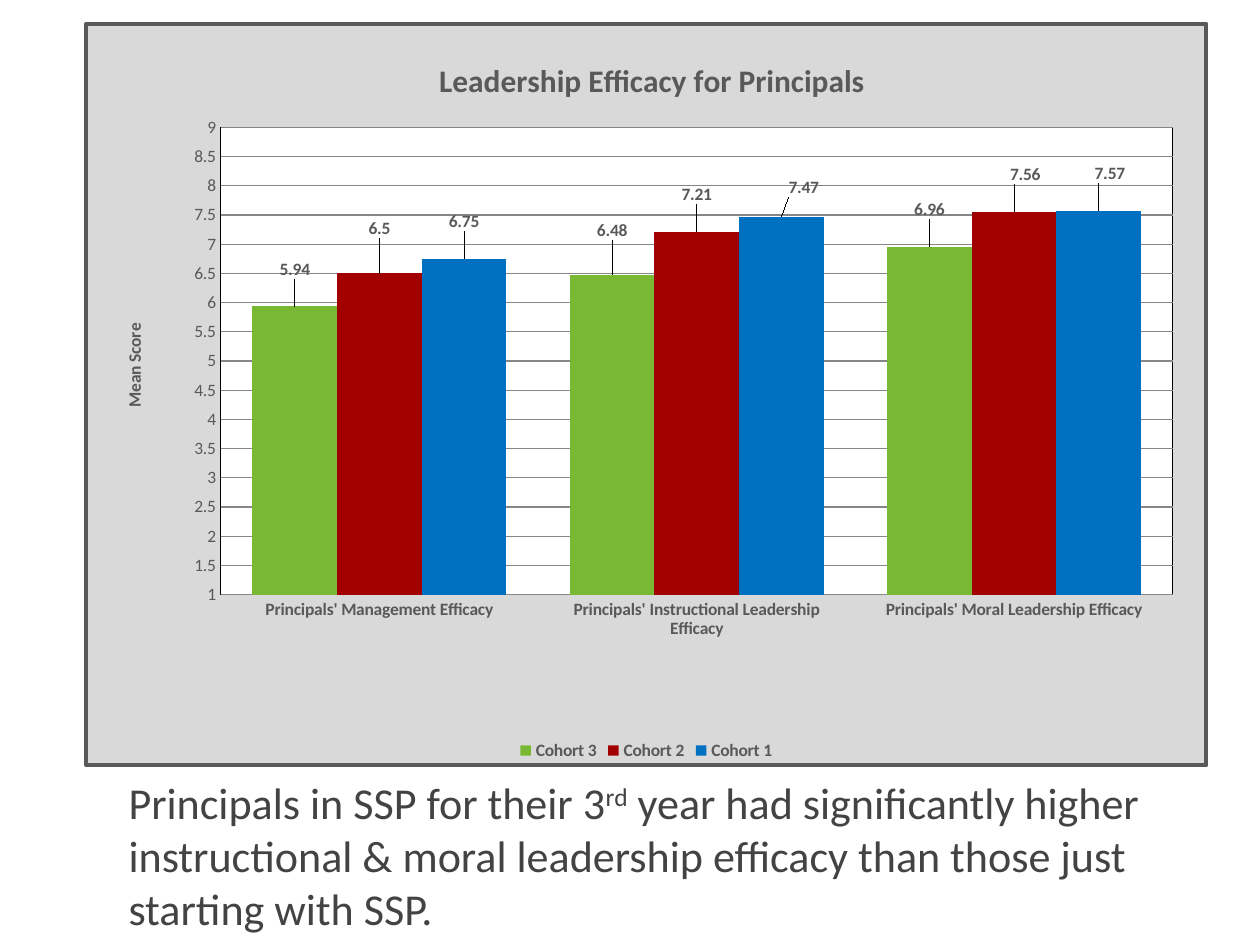
"""Build a slide with a clustered column chart of leadership efficacy and its finding."""
from lxml.etree import SubElement
from pptx import Presentation
from pptx.chart.data import CategoryChartData
from pptx.dml.color import RGBColor
from pptx.enum.chart import XL_CHART_TYPE as ChartType, XL_LABEL_POSITION as LabelPosition
from pptx.enum.chart import XL_LEGEND_POSITION as LegendPosition, XL_TICK_MARK as TickMark
from pptx.enum.text import MSO_ANCHOR as Anchor, MSO_AUTO_SIZE as AutoSize, PP_ALIGN as Align
from pptx.oxml import parse_xml
from pptx.oxml.ns import nsdecls, qn
from pptx.util import Inches, Pt

FONT = "Calibri"
COLORS = {"text": "434343", "chart_text": "595959", "panel": "D9D9D9", "plot": "FFFFFF",
          "grid": "868686", "frame": "000000"}
CATEGORIES = ["Principals' Management Efficacy", "Principals' Instructional Leadership Efficacy",
              "Principals' Moral Leadership Efficacy"]
COHORTS = [
    ("Cohort 3", "78B832", (5.94, 6.48, 6.96), ((0, -0.03), (0, -0.04), (0, -0.03))),
    ("Cohort 2", "A20000", (6.5, 7.21, 7.56), ((0, -0.04), (0, -0.03), (0.01, -0.03))),
    ("Cohort 1", "0070C0", (6.75, 7.47, 7.57), ((0, -0.03), (0.02, -0.02), (0.01, -0.03))),
]


def style_font(font, size, color, bold=False):
    font.name, font.size, font.bold = FONT, Pt(size), bold
    font.color.rgb = RGBColor.from_string(COLORS[color])


def make_layout(**settings):
    layout = parse_xml(f"<c:layout {nsdecls('c')}><c:manualLayout/></c:layout>")
    for name, value in settings.items():
        SubElement(layout[0], qn(f"c:{name}")).set("val", str(value))
    return layout


presentation = Presentation()
presentation.slide_width, presentation.slide_height = Inches(10), Inches(7.5)
width, height = presentation.slide_width, presentation.slide_height
slide = presentation.slides.add_slide(presentation.slide_layouts[5])

title = slide.shapes.title
title.left, title.top = int(width * 0.092), int(height * 0.81)
title.width, title.height = int(width * 0.833), int(height * 0.19)
frame = title.text_frame
frame.word_wrap, frame.auto_size, frame.vertical_anchor = True, AutoSize.NONE, Anchor.MIDDLE
paragraph = frame.paragraphs[0]
paragraph.alignment = Align.LEFT
for text, baseline in [
    ("Principals in SSP for their 3", 0),
    ("rd", 30000),
    (" year had significantly higher instructional & moral leadership efficacy "
     "than those just starting with SSP.", 0),
]:
    run = paragraph.add_run()
    run.text = text
    style_font(run.font, 25.2, "text")
    if baseline:
        run.font._element.set("baseline", str(baseline))

data = CategoryChartData()
data.categories = CATEGORIES
for name, color, values, offsets in COHORTS:
    data.add_series(name, values)
chart = slide.shapes.add_chart(
    ChartType.COLUMN_CLUSTERED, int(width * 0.067), int(height * 0.023),
    int(width * 0.892), int(height * 0.789), data).chart
style_font(chart.font, 10, "chart_text")

value_axis, category_axis = chart.value_axis, chart.category_axis
for owner, text, size, left, top in [
    (chart, "Leadership Efficacy for Principals", 18, 0.31, 0.04),
    (value_axis, "Mean Score", 10, 0.03, 0.4),
]:
    heading = owner.chart_title if owner is chart else owner.axis_title
    run = heading.text_frame.paragraphs[0].add_run()
    run.text = text
    style_font(run.font, size, "chart_text", bold=True)
    for old in heading._element.findall(qn("c:layout")):
        heading._element.remove(old)
    heading._element.find(qn("c:tx")).addnext(
        make_layout(xMode="edge", yMode="edge", x=left, y=top))
chart.chart_title.include_in_layout = False

for axis, bold in [(value_axis, False), (category_axis, True)]:
    axis.major_tick_mark = axis.minor_tick_mark = TickMark.NONE
    style_font(axis.tick_labels.font, 10, "chart_text", bold)
value_axis.minimum_scale, value_axis.maximum_scale, value_axis.major_unit = 1, 9, 0.5
value_axis.format.line.fill.background()
for line in (value_axis.major_gridlines.format.line, category_axis.format.line):
    line.color.rgb = RGBColor.from_string(COLORS["grid"])
    line.width = Pt(0.75)

chart.has_legend = True
chart.legend.position = LegendPosition.BOTTOM
chart.legend.include_in_layout = False
style_font(chart.legend.font, 10, "chart_text", bold=True)

plot = chart.plots[0]
plot.gap_width, plot.overlap, plot.vary_by_categories = 75, 0, False
for series, (name, color, values, offsets) in zip(plot.series, COHORTS):
    series.format.fill.solid()
    series.format.fill.fore_color.rgb = RGBColor.from_string(color)
    series.data_labels.show_value = True
    style_font(series.data_labels.font, 10, "chart_text", bold=True)
    for index, (across, down) in enumerate(offsets):
        label = series.points[index].data_label
        style_font(label.font, 10, "chart_text", bold=True)
        label.position = LabelPosition.OUTSIDE_END
    for element, (across, down) in zip(series._element.iter(qn("c:dLbl")), offsets):
        element.find(qn("c:idx")).addnext(make_layout(x=across, y=down))

plot_area = chart._chartSpace.chart.plotArea
for old in plot_area.findall(qn("c:layout")):
    plot_area.remove(old)
plot_area.insert(0, make_layout(layoutTarget="inner", xMode="edge", yMode="edge",
                                x=0.12, y=0.14, w=0.85, h=0.63))


area_styles = [(plot_area, "plot", "frame", 0.75),
               (chart._chartSpace, "panel", "chart_text", 2.25)]
for area, fill, border, points in area_styles:
    properties = parse_xml(
        f'<c:spPr {nsdecls("c", "a")}><a:solidFill><a:srgbClr val="{COLORS[fill]}"/></a:solidFill>'
        f'<a:ln w="{Pt(points)}"><a:solidFill><a:srgbClr val="{COLORS[border]}"/></a:solidFill>'
        '</a:ln></c:spPr>')
    if area is plot_area:
        area.append(properties)
    else:
        area.chart.addnext(properties)

presentation.save("out.pptx")
